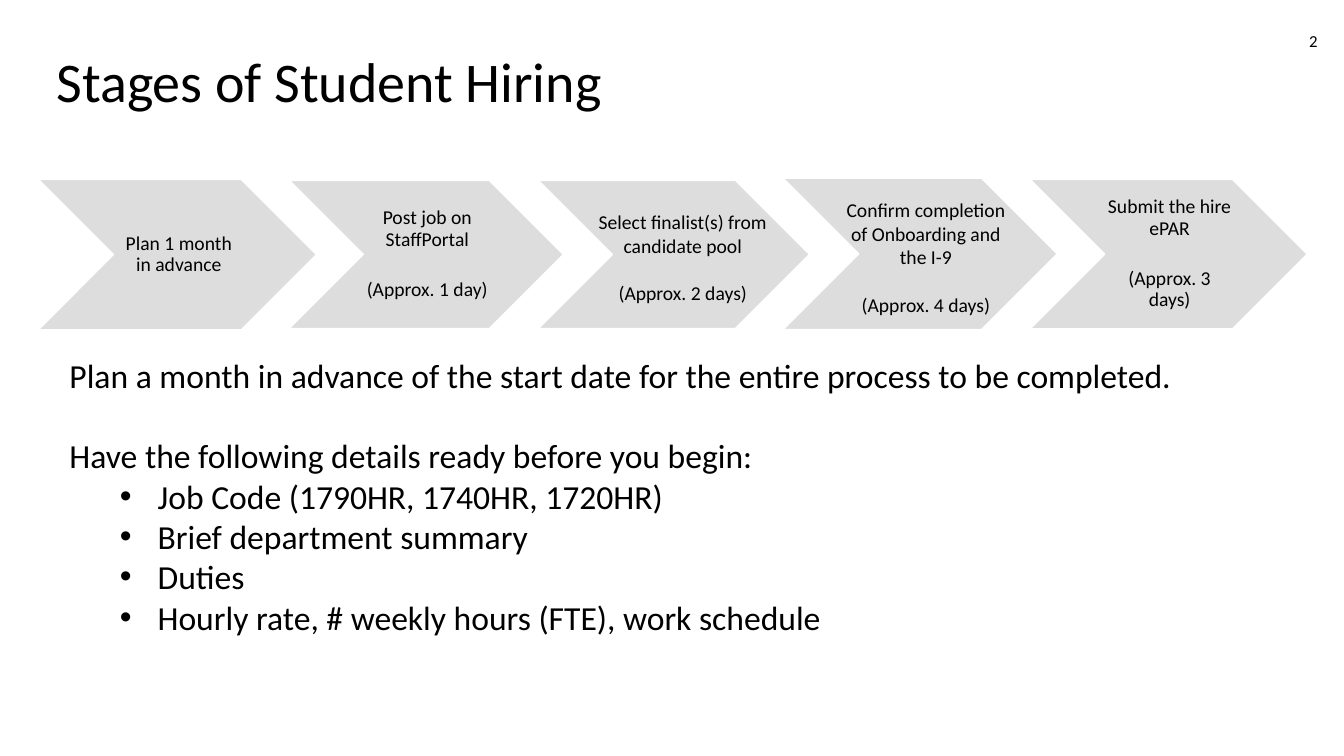
from lxml import etree
from pptx import Presentation
from pptx.dml.color import RGBColor
from pptx.enum import shapes, text
from pptx.oxml.ns import qn
from pptx.util import Pt

HUES = {"ink": "000000", "grey": "DDDDDD", "white": "FFFFFF"}
MID = text.PP_ALIGN.CENTER
LEFT = text.PP_ALIGN.LEFT


class Deck:
    """Holds the style and the current slide, and draws its elements."""

    def __init__(self, wide, high, face):
        self.prs = Presentation()
        self.prs.slide_width, self.prs.slide_height = Pt(wide), Pt(high)
        self.face = face
        self.slide = self.prs.slides.add_slide(self.prs.slide_layouts[6])

    def hue(self, name):
        return RGBColor.from_string(HUES[name])

    def arrow(self, box):
        kind = shapes.MSO_SHAPE.CHEVRON
        shape = self.slide.shapes.add_shape(kind, *map(Pt, box))
        shape.shadow.inherit = False
        shape.fill.solid()
        shape.fill.fore_color.rgb = self.hue("grey")
        shape.line.color.rgb = self.hue("white")
        shape.line.width = Pt(1)

    def words(self, box, lines, size, align=LEFT, gap=0, lead=1.0,
              pad=(7.2, 3.6, 7.2, 3.6), anchor=text.MSO_ANCHOR.TOP, wrap=True):
        frame = self.slide.shapes.add_textbox(*map(Pt, box)).text_frame
        frame.word_wrap = wrap
        frame.vertical_anchor = anchor
        frame.margin_left, frame.margin_top, frame.margin_right, frame.margin_bottom = map(Pt, pad)
        for i, line in enumerate(lines):
            para = frame.paragraphs[0] if i == 0 else frame.add_paragraph()
            para.alignment = align
            para.line_spacing = lead
            para.space_before = Pt(gap if i == 1 else 0)
            if line.startswith("•"):
                self.bullet(para)
            run = para.add_run()
            run.text = line.lstrip("•")
            run.font.name = self.face
            run.font.size = Pt(size)
            run.font.color.rgb = self.hue("ink")

    def bullet(self, para):
        para.level = 1
        props = para._p.get_or_add_pPr()
        props.set("marL", str(Pt(63)))
        props.set("indent", str(Pt(-27)))
        etree.SubElement(props, qn("a:buFont")).set("typeface", "Arial")
        etree.SubElement(props, qn("a:buChar")).set("char", "•")


TIGHT = {"lead": 0.9, "gap": 21, "pad": (1.4, 1.4, 1.4, 1.4)}
LOOSE = {"gap": 17}
STAGES = [
    ((27.4, 128.2, 198.7, 107.3), (80.6, 128.2, 91.4, 107.3),
     ["Plan 1 month in advance"], {**TIGHT, "pad": (4.3, 1.4, 1.4, 1.4)}),
    ((206.6, 128.9, 195.8, 105.8), (259.9, 128.9, 90.7, 105.8),
     ["Post job on StaffPortal", "(Approx. 1 day)"], TIGHT),
    ((384.5, 128.9, 193.7, 105.8), (411.8, 146.2, 151.9, 74.9),
     ["Select finalist(s) from candidate pool", "(Approx. 2 days)"], LOOSE),
    ((559.4, 127.4, 195.8, 108), (596.2, 137.5, 130.3, 92.2),
     ["Confirm completion of Onboarding and the I-9", "(Approx. 4 days)"], LOOSE),
    ((735.8, 128.2, 198, 106.6), (789.8, 128.2, 91.4, 106.6),
     ["Submit the hire ePAR", "(Approx. 3 days)"], TIGHT),
]
NOTES = [
    "Plan a month in advance of the start date for the entire process to be completed.",
    "Have the following details ready before you begin:",
    "•Job Code (1790HR, 1740HR, 1720HR)",
    "•Brief department summary",
    "•Duties",
    "•Hourly rate, # weekly hours (FTE), work schedule",
]


def main():
    deck = Deck(960, 540, "Calibri")
    deck.words((25.9, 29.5, 418.3, 55.4), ["Stages of Student Hiring"], 40, MID, wrap=False)
    for shape, label, lines, style in STAGES:
        deck.arrow(shape)
        deck.words(label, lines, 14, MID, anchor=text.MSO_ANCHOR.MIDDLE, **style)
    deck.words((42.5, 249.8, 833.8, 211), NOTES, 24, gap=28.8)
    deck.words((928.1, 18.7, 18, 21.6), ["2"], 12, wrap=False)
    deck.prs.save("out.pptx")


if __name__ == "__main__":
    main()
